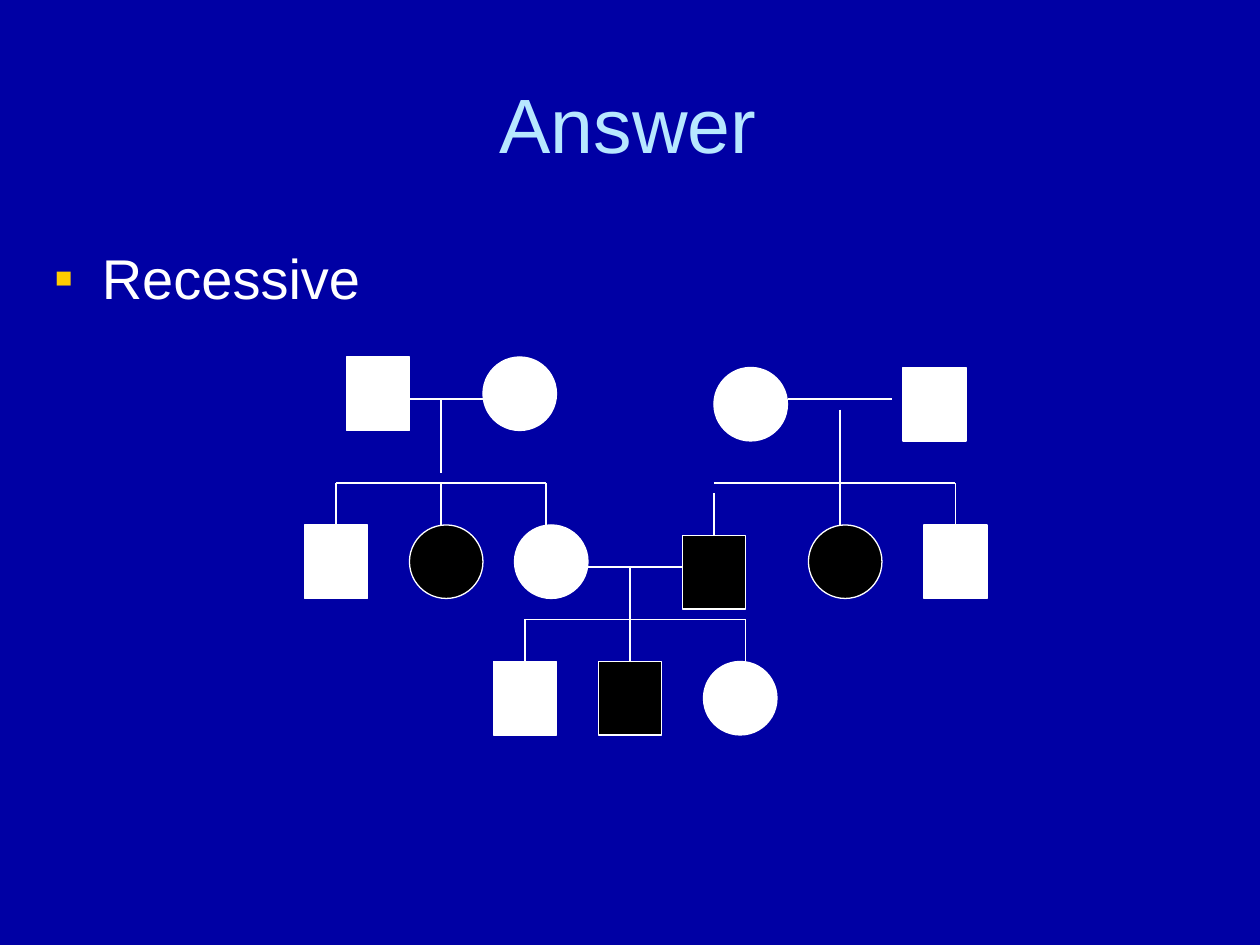
import pptx
import pptx.util
import pptx.dml.color
import pptx.enum.shapes
import pptx.enum.text
import pptx.oxml
import pptx.oxml.ns

Inches, Pt = pptx.util.Inches, pptx.util.Pt
RGB = pptx.dml.color.RGBColor
KIND = pptx.enum.shapes.MSO_SHAPE
ANCHOR = pptx.enum.text.MSO_ANCHOR
ALIGN = pptx.enum.text.PP_ALIGN

NAVY = RGB(0x00, 0x00, 0xA4)
SKY = RGB(0xB7, 0xE7, 0xFF)
WHITE = RGB(0xFF, 0xFF, 0xFF)
BLACK = RGB(0x00, 0x00, 0x00)
GOLD = RGB(0xFF, 0xCC, 0x00)
FONT = "Arial"

TITLE = "Answer"
POINTS = ["Recessive"]

# The pedigree sits on a grid of twelve cells to the inch.
CELL = Inches(1) / 12
TALL = 7
WIDE = {"male": 6, "female": 7}

# sex, column, row, affected
PEOPLE = [
    ("male", 33, 34, False), ("female", 46, 34, False),
    ("female", 68, 35, False), ("male", 86, 35, False),
    ("male", 29, 50, False), ("female", 39, 50, True),
    ("female", 49, 50, False), ("male", 65, 51, True),
    ("female", 77, 50, True), ("male", 88, 50, False),
    ("male", 47, 63, False), ("male", 57, 63, True),
    ("female", 67, 63, False),
]

# pair: left, right, row; stem: column, top, end; bar: row;
# drops: column, top, end for each child from left to right
FAMILIES = [
    {"pair": (39, 46, 38), "stem": (42, 38, 45), "bar": 46,
     "drops": [(32, 46, 50), (42, 46, 50), (52, 46, 50)]},
    {"pair": (75, 85, 38), "stem": (80, 39, 46), "bar": 46,
     "drops": [(68, 47, 51), (80, 46, 50), (91, 46, 50)]},
    {"pair": (56, 65, 54), "stem": (60, 54, 59), "bar": 59,
     "drops": [(50, 59, 63), (60, 59, 63), (71, 59, 63)]},
]


def grid(*cells):
    return [round(n * CELL) for n in cells]


def write(para, text, size, color):
    run = para.add_run()
    run.text = text
    run.font.name = FONT
    run.font.size = Pt(size)
    run.font.color.rgb = color


def frame(slide, left, top, wide, high):
    box = slide.shapes.add_textbox(*map(Inches, (left, top, wide, high)))
    box.text_frame.word_wrap = True
    return box.text_frame


def bullet(para):
    props = para._p.get_or_add_pPr()
    props.set("marL", str(Inches(0.38)))
    props.set("indent", str(-Inches(0.38)))
    space = pptx.oxml.ns.nsdecls("a")
    for xml in (
        f'<a:buClr {space}><a:srgbClr val="{GOLD}"/></a:buClr>',
        f'<a:buFont {space} typeface="{FONT}"/>',
        f'<a:buChar {space} char="▪"/>',
    ):
        props.append(pptx.oxml.parse_xml(xml))


def person(group, sex, col, row, ill):
    kind = KIND.RECTANGLE if sex == "male" else KIND.OVAL
    shape = group.shapes.add_shape(kind, *grid(col, row, WIDE[sex], TALL))
    shape.shadow.inherit = False
    shape.fill.solid()
    shape.fill.fore_color.rgb = BLACK if ill else WHITE
    shape.line.color.rgb = WHITE
    shape.line.width = Pt(0.75)
    return shape


def line(group, *ends):
    link = group.shapes.add_connector(
        pptx.enum.shapes.MSO_CONNECTOR.STRAIGHT, *grid(*ends))
    link.line.color.rgb = WHITE
    link.line.width = Pt(0.75)
    link._element.spPr.append(pptx.oxml.parse_xml(
        f'<a:effectLst {pptx.oxml.ns.nsdecls("a")}/>'))
    return link


def pedigree(slide):
    group = slide.shapes.add_group_shape()
    tops = {}
    for sex, col, row, ill in PEOPLE:
        shape = person(group, sex, col, row, ill)
        if sex == "male":
            tops[col + WIDE[sex] // 2, row] = shape
    for kin in FAMILIES:
        left, right, row = kin["pair"]
        line(group, left, row, right, row)
        col, top, end = kin["stem"]
        line(group, col, top, col, end)
        drops = kin["drops"]
        line(group, drops[0][0], kin["bar"], drops[-1][0], kin["bar"])
        for col, top, end in drops:
            link = line(group, col, top, col, end)
            if (col, end) in tops:
                link.end_connect(tops[col, end], 0)


def main():
    deck = pptx.Presentation()
    deck.slide_width, deck.slide_height = Inches(10), Inches(7.5)
    slide = deck.slides.add_slide(deck.slide_layouts[6])
    slide.background.fill.solid()
    slide.background.fill.fore_color.rgb = NAVY

    head = frame(slide, 0.33, 0.25, 9.31, 1.45)
    head.vertical_anchor = ANCHOR.MIDDLE
    head.paragraphs[0].alignment = ALIGN.CENTER
    write(head.paragraphs[0], TITLE, 44, SKY)

    body = frame(slide, 0.33, 1.83, 9.34, 4.84)
    body.margin_top = Inches(0.1)
    for i, text in enumerate(POINTS):
        para = body.add_paragraph() if i else body.paragraphs[0]
        bullet(para)
        write(para, text, 32, WHITE)

    pedigree(slide)
    deck.save("out.pptx")


if __name__ == "__main__":
    main()
